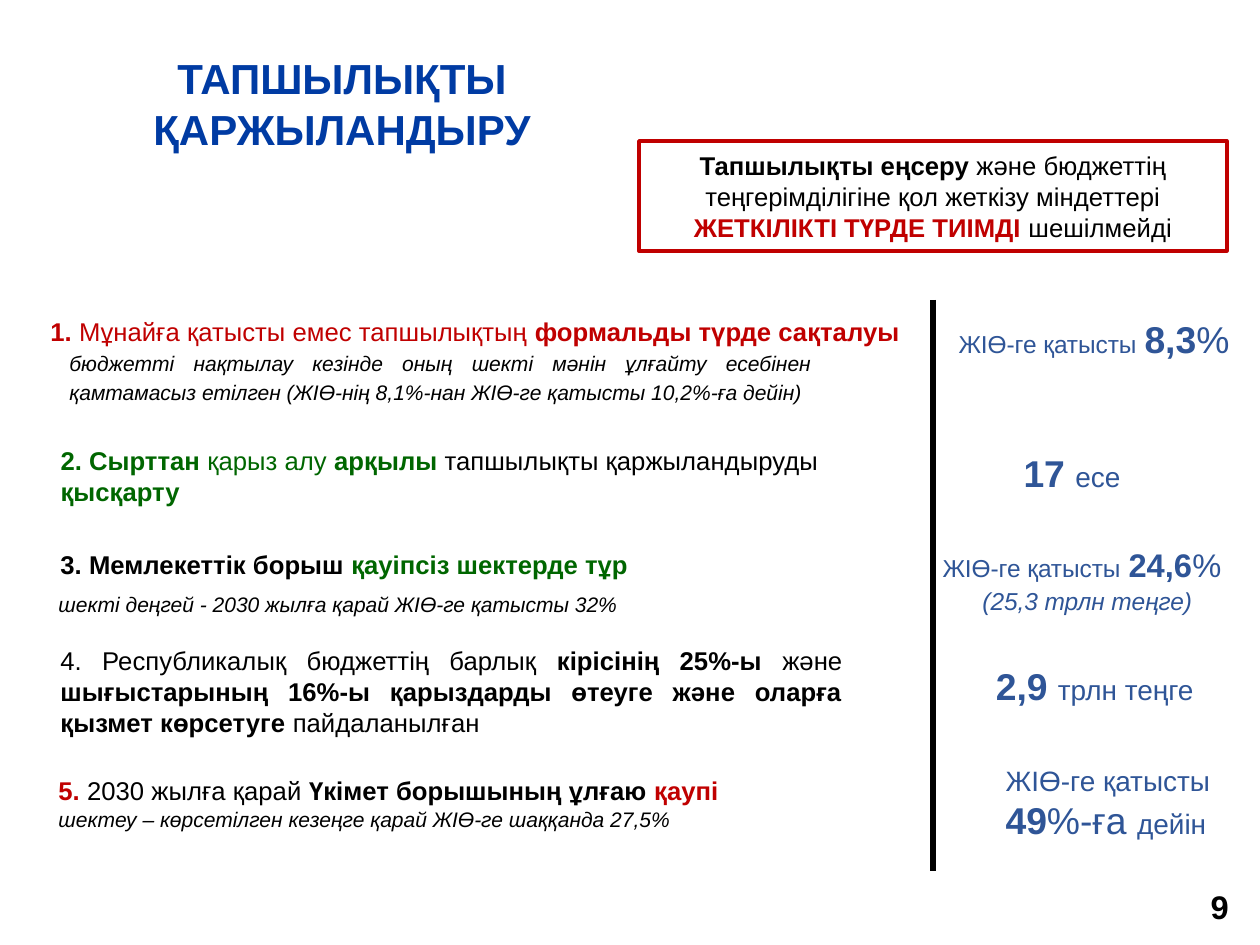
from lxml import etree
from pptx import Presentation
from pptx.dml.color import RGBColor
from pptx.enum.shapes import MSO_CONNECTOR, MSO_SHAPE
from pptx.enum.text import MSO_ANCHOR, MSO_AUTO_SIZE, PP_ALIGN
from pptx.oxml.ns import qn
from pptx.util import Emu, Pt

LEFT, CENTER, RIGHT, JUSTIFY = PP_ALIGN.LEFT, PP_ALIGN.CENTER, PP_ALIGN.RIGHT, PP_ALIGN.JUSTIFY
BLACK = RGBColor(0x00, 0x00, 0x00)
WHITE = RGBColor(0xFF, 0xFF, 0xFF)
RED = RGBColor(0xC0, 0x00, 0x00)
GREEN = RGBColor(0x00, 0x66, 0x00)
BLUE = RGBColor(0x2F, 0x55, 0x97)
TITLE_BLUE = RGBColor(0x00, 0x3B, 0xA3)
FONT = "Arial"
PX = 914400 / 168


def px(*lengths):
    return [Emu(round(length * PX)) for length in lengths]


def write(paragraph, align, size, color, runs, italic=False, spacing=None):
    """Each run is (text, bold) and, where it differs, its own {"size", "color"}."""
    paragraph.alignment = align
    if spacing:
        paragraph.line_spacing = spacing
    base = paragraph.font
    base.name, base.size, base.italic = FONT, Pt(size), italic
    base.color.rgb = color
    for text, bold, *changes in runs:
        run = paragraph.add_run()
        run.text = text
        run.font.bold = bold
        for change in changes:
            if "size" in change:
                run.font.size = Pt(change["size"])
            if "color" in change:
                run.font.color.rgb = change["color"]


prs = Presentation()
prs.slide_width, prs.slide_height = px(1260, 945)
slide = prs.slides.add_slide(prs.slide_layouts[5])

title = slide.shapes.title
title.left, title.top, title.width, title.height = px(90, 41, 504, 64)
heading = title.text_frame
heading.word_wrap = True
heading.auto_size = MSO_AUTO_SIZE.NONE
heading.vertical_anchor = MSO_ANCHOR.TOP
heading.margin_left, heading.margin_top, heading.margin_right, heading.margin_bottom = px(12, 12, 12, 12)
write(heading.paragraphs[0], CENTER, 18, TITLE_BLUE, [("ТАПШЫЛЫҚТЫ ҚАРЖЫЛАНДЫРУ", True)])

divider = slide.shapes.add_connector(MSO_CONNECTOR.STRAIGHT, *px(933, 300, 933, 871))
divider.line.color.rgb = BLACK
divider.line.width = Pt(2.25)
etree.SubElement(divider._element.spPr, qn("a:effectLst"))

conclusion = slide.shapes.add_shape(MSO_SHAPE.RECTANGLE, *px(639, 141, 588, 110))
conclusion.shadow.inherit = False
conclusion.fill.solid()
conclusion.fill.fore_color.rgb = WHITE
conclusion.line.color.rgb = RED
conclusion.line.width = Pt(1.5)
conclusion.text_frame.word_wrap = True
write(conclusion.text_frame.paragraphs[0], CENTER, 11, BLACK, [
    ("Тапшылықты еңсеру ", True),
    ("және бюджеттің теңгерімділігіне қол жеткізу міндеттері ", False),
    ("ЖЕТКІЛІКТІ ТҮРДЕ ТИІМДІ ", True, {"color": RED}),
    ("шешілмейді", False)])

# Each text: left, top, width, height, then its paragraphs
findings = [
    (34, 308, 894, 49, [dict(align=LEFT, size=11, color=RED, runs=[
        ("1. ", True), ("Мұнайға қатысты емес тапшылықтың ", False),
        ("формальды түрде сақталуы", True)])]),
    (53, 338, 774, 72, [dict(align=JUSTIFY, size=9, color=BLACK, italic=True, spacing=1.15, runs=[
        ("бюджетті нақтылау кезінде оның шекті мәнін ұлғайту есебінен қамтамасыз етілген "
         "(ЖІӨ-нің 8,1%-нан ЖІӨ-ге қатысты 10,2%-ға дейін)", False)])]),
    (44, 437, 791, 79, [dict(align=LEFT, size=11, color=GREEN, runs=[
        ("2. Сырттан ", True), ("қарыз алу ", False), ("арқылы ", True),
        ("тапшылықты қаржыландыруды ", False, {"color": BLACK}), ("қысқарту", True)])]),
    (44, 541, 801, 49, [dict(align=LEFT, size=11, color=BLACK, runs=[
        ("3. Мемлекеттік борыш ", True), ("қауіпсіз шектерде тұр", True, {"color": GREEN})])]),
    (42, 579, 638, 44, [dict(align=JUSTIFY, size=9, color=BLACK, italic=True, spacing=1.15, runs=[
        ("шекті деңгей - 2030 жылға қарай ЖІӨ-ге қатысты 32% ", False)])]),
    (44, 637, 815, 111, [dict(align=JUSTIFY, size=11, color=BLACK, runs=[
        ("4. Республикалық бюджеттің барлық ", False), ("кірісінің 25%-ы", True), (" және ", False),
        ("шығыстарының 16%-ы қарыздарды өтеуге және оларға қызмет көрсетуге", True),
        (" пайдаланылған", False)])]),
    (42, 767, 815, 74, [
        dict(align=JUSTIFY, size=11, color=BLACK, runs=[
            ("5. ", True, {"color": RED}), ("2030 жылға қарай ", False),
            ("Үкімет борышының ұлғаю ", True), ("қаупі ", True, {"color": RED})]),
        dict(align=JUSTIFY, size=9, color=BLACK, italic=True, runs=[
            ("шектеу – көрсетілген кезеңге қарай ЖІӨ-ге шаққанда 27,5% ", False)])]),
]
figures = [
    (942, 308, 328, 62, [dict(align=LEFT, size=16, color=BLUE, runs=[
        ("ЖІӨ-ге қатысты", False, {"size": 10.5}), (" ", False, {"size": 12}),
        ("8,3", True), ("%", False)])]),
    (1007, 442, 203, 62, [dict(align=LEFT, size=16, color=BLUE, runs=[
        ("17 ", True), ("есе", False, {"size": 12})])]),
    (926, 537, 326, 57, [dict(align=LEFT, size=14, color=BLUE, runs=[
        ("ЖІӨ-ге қатысты", False, {"size": 10.5}), (" ", False, {"size": 12}),
        ("24,6", True), ("%", False)])]),
    (966, 578, 252, 47, [dict(align=LEFT, size=10.5, color=BLUE, italic=True, runs=[
        ("(25,3 трлн теңге)", False)])]),
    (939, 655, 279, 62, [dict(align=RIGHT, size=16, color=BLUE, runs=[
        ("2,9 ", True), ("трлн теңге ", False, {"size": 12})])]),
    (989, 755, 262, 96, [dict(align=LEFT, size=16, color=BLUE, runs=[
        ("ЖІӨ-ге қатысты ", False, {"size": 12}), ("49", True), ("%-ға ", False),
        ("дейін", False, {"size": 12})])]),
]
page_number = (1194, 879, 47, 57, [dict(align=LEFT, size=14, color=BLACK, runs=[("9", True)])])

for left, top, width, height, paragraphs in findings + figures + [page_number]:
    frame = slide.shapes.add_textbox(*px(left, top, width, height)).text_frame
    frame.word_wrap = True
    for index, content in enumerate(paragraphs):
        write(frame.add_paragraph() if index else frame.paragraphs[0], **content)

prs.save("out.pptx")
